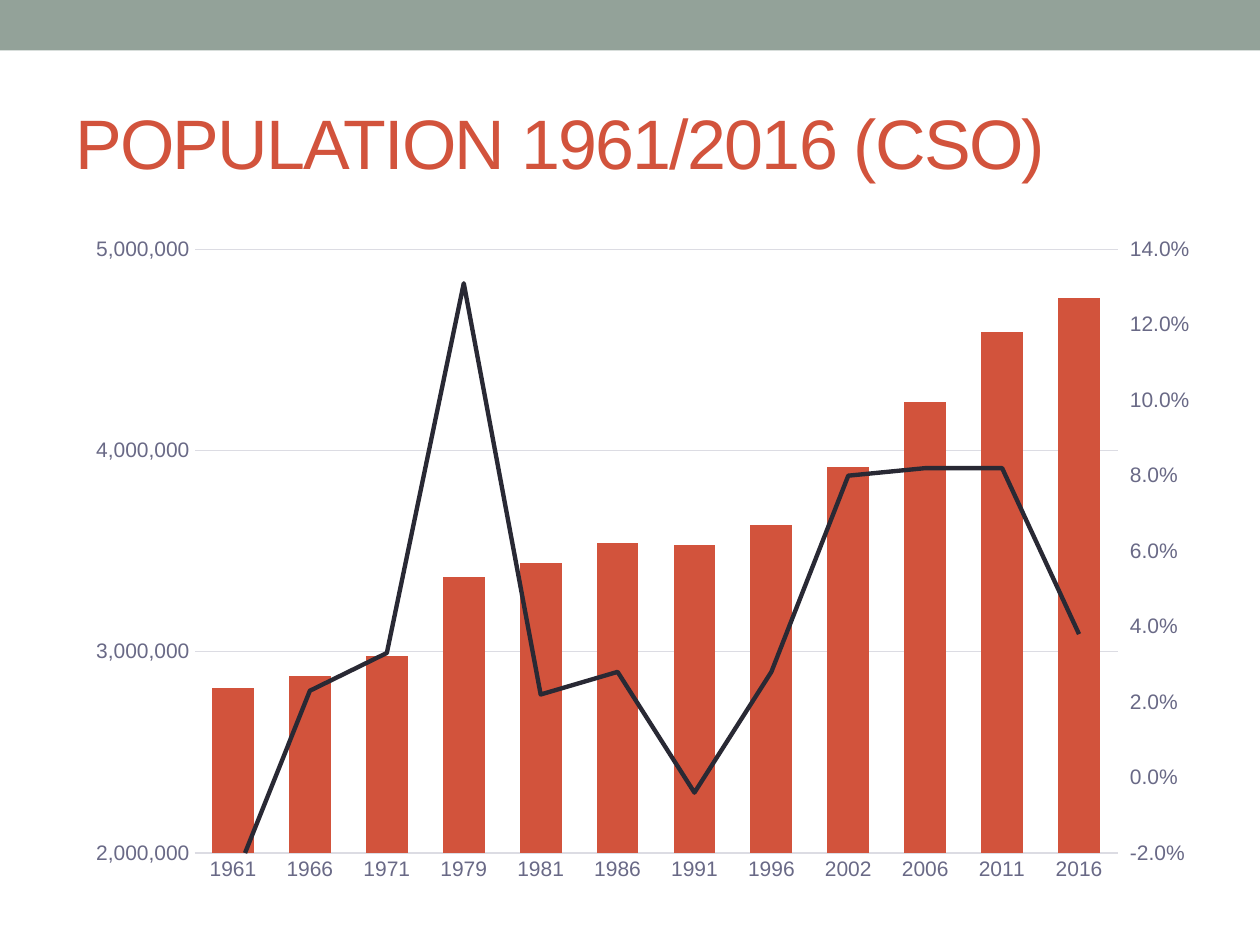
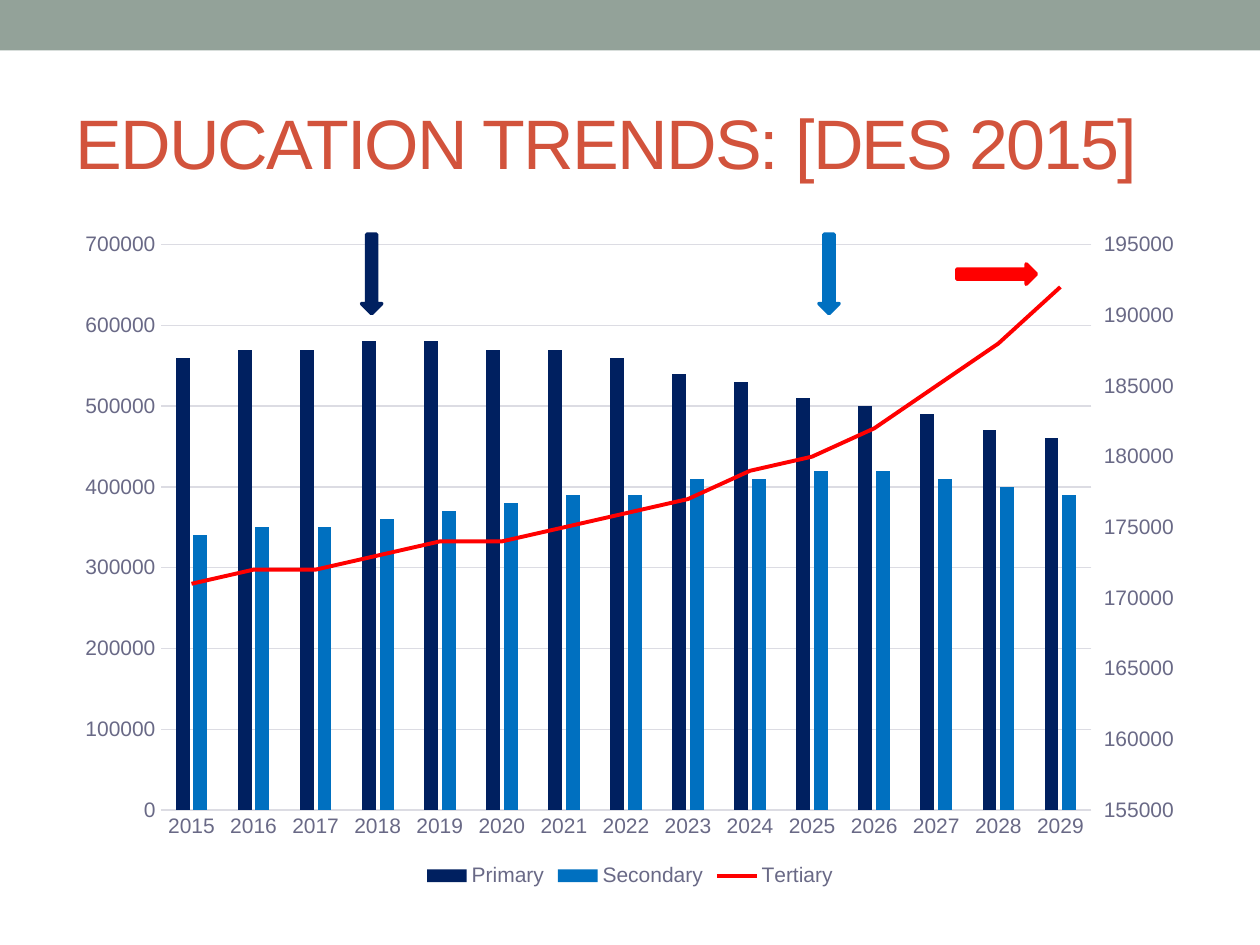
"""Build two slides on population and education trends."""
from copy import deepcopy
from dataclasses import dataclass

from pptx import Presentation
from pptx.chart.axis import CategoryAxis, ValueAxis
from pptx.chart.data import CategoryChartData
from pptx.dml.color import RGBColor
from pptx.enum.chart import XL_CHART_TYPE, XL_LEGEND_POSITION, XL_MARKER_STYLE, XL_TICK_MARK
from pptx.enum.shapes import MSO_SHAPE
from pptx.enum.text import MSO_ANCHOR
from pptx.oxml import parse_xml
from pptx.oxml.ns import nsdecls, qn
from pptx.util import Inches, Pt

COLUMNS = XL_CHART_TYPE.COLUMN_CLUSTERED
LEGEND_BOTTOM = XL_LEGEND_POSITION.BOTTOM
NO_MARKER = XL_MARKER_STYLE.NONE
TICK_NONE, TICK_OUT = XL_TICK_MARK.NONE, XL_TICK_MARK.OUTSIDE
RECTANGLE, DOWN_ARROW = MSO_SHAPE.RECTANGLE, MSO_SHAPE.DOWN_ARROW
MIDDLE = MSO_ANCHOR.MIDDLE


@dataclass(frozen=True)
class Theme:
    """Colours, font and sizes shared by the slides."""
    font: str = "Arial"
    band: str = "93A299"
    accent: str = "D2533C"
    dark: str = "292934"
    label: str = "696986"
    grid: str = "DCDCE3"
    navy: str = "002060"
    blue: str = "0070C0"
    red: str = "FF0000"
    title_size: float = 40
    chart_size: float = 10
    label_size: float = 12
    grid_width: float = 0.75
    arrow_line: float = 2.08


THEME = Theme()


@dataclass(frozen=True)
class Scale:
    """Range and number format of a value axis."""
    minimum: float
    maximum: float
    step: float
    number_format: str = "General"


def rgb(colour):
    """Turn a hex string into a colour."""
    return RGBColor.from_string(colour)


def style_font(font, size, colour):
    """Apply the theme font with a size and colour."""
    font.name = THEME.font
    font.size = Pt(size)
    font.color.rgb = rgb(colour)


def style_line(line, colour, width):
    """Set the colour and width of a line."""
    line.color.rgb = rgb(colour)
    line.width = Pt(width)


def add_text(slide, text, box, *, size, colour, anchor=MIDDLE, spacing=0):
    """Add a text box holding one formatted paragraph."""
    frame = slide.shapes.add_textbox(*map(Inches, box)).text_frame
    frame.word_wrap = True
    frame.vertical_anchor = anchor
    run = frame.paragraphs[0].add_run()
    run.text = text
    style_font(run.font, size, colour)
    run._r.get_or_add_rPr().set("spc", str(int(spacing * 100)))


def add_filled_shape(slide, kind, box, colour, line_width=0, rotation=0):
    """Add a flat shape, outlined in its own colour if a width is given."""
    shape = slide.shapes.add_shape(kind, *map(Inches, box))
    shape.shadow.inherit = False
    shape.rotation = rotation
    shape.fill.solid()
    shape.fill.fore_color.rgb = rgb(colour)
    if line_width:
        style_line(shape.line, colour, line_width)
    else:
        shape.line.fill.background()


def add_arrow(slide, left, colour, rotation=0):
    """Add a marker arrow above the chart."""
    add_filled_shape(slide, DOWN_ARROW, (left, 1.86, 0.16, 0.63), colour,
                     THEME.arrow_line, rotation)


def add_titled_slide(presentation, title):
    """Add a blank slide with the top band and a title."""
    slide = presentation.slides.add_slide(presentation.slide_layouts[6])
    add_filled_shape(slide, RECTANGLE, (0, 0, 10, 0.4), THEME.band)
    add_text(slide, title, (0.5, 0.58, 9, 1.08), size=THEME.title_size,
             colour=THEME.accent, spacing=-1)
    return slide


def style_value_axis(axis, scale, tick, gridlines):
    """Format a value axis that has labels but no line."""
    axis.minimum_scale = scale.minimum
    axis.maximum_scale = scale.maximum
    axis.major_unit = scale.step
    axis.major_tick_mark = tick
    axis.minor_tick_mark = TICK_NONE
    axis.format.line.fill.background()
    axis.has_major_gridlines = gridlines
    if gridlines:
        style_line(axis.major_gridlines.format.line, THEME.grid, THEME.grid_width)
    axis.tick_labels.number_format = scale.number_format
    axis.tick_labels.number_format_is_linked = False
    style_font(axis.tick_labels.font, THEME.label_size, THEME.label)


def style_category_axis(axis):
    """Format the category axis."""
    axis.major_tick_mark = axis.minor_tick_mark = TICK_NONE
    style_line(axis.format.line, THEME.grid, THEME.grid_width)
    style_font(axis.tick_labels.font, THEME.label_size, THEME.label)


def remove_children(parent, tag):
    """Remove every direct child with a tag."""
    for child in parent.findall(qn(tag)):
        parent.remove(child)


def set_plot_area(plot_area, box):
    """Place the inner plot area by fractions of the chart."""
    remove_children(plot_area, "c:layout")
    sizes = "".join(f'<c:{name} val="{value}"/>' for name, value in zip("xywh", box))
    plot_area.insert(0, parse_xml(
        f'<c:layout {nsdecls("c")}><c:manualLayout><c:layoutTarget val="inner"/>'
        f'<c:xMode val="edge"/><c:yMode val="edge"/>{sizes}'
        '</c:manualLayout></c:layout>'))


def move_last_series_to_right_axis(plot_area, scale):
    """Turn the last column series into a line on a second value axis."""
    columns = plot_area.find(qn("c:barChart"))
    series = columns.findall(qn("c:ser"))[-1]
    remove_children(series, "c:invertIfNegative")
    category_id, value_id = "50010", "50020"
    line_chart = parse_xml(
        f'<c:lineChart {nsdecls("c")}><c:grouping val="standard"/>'
        '<c:varyColors val="0"/><c:marker val="1"/>'
        f'<c:axId val="{category_id}"/><c:axId val="{value_id}"/></c:lineChart>')
    line_chart.insert(2, series)
    columns.addnext(line_chart)

    left_axis = plot_area.find(qn("c:valAx"))
    categories = deepcopy(plot_area.find(qn("c:catAx")))
    right_axis = deepcopy(left_axis)
    left_axis.addnext(categories)
    categories.addnext(right_axis)
    for axis, own, other in ((categories, category_id, value_id),
                             (right_axis, value_id, category_id)):
        axis.find(qn("c:axId")).set("val", own)
        axis.find(qn("c:crossAx")).set("val", other)
    right_axis.find(qn("c:axPos")).set("val", "r")
    right_axis.find(qn("c:crosses")).set("val", "max")
    CategoryAxis(categories).visible = False
    style_value_axis(ValueAxis(right_axis), scale, TICK_OUT, False)


def add_combined_chart(slide, categories, series, *, colours, left, right, gap,
                       overlap, line_width, plot_box, legend=False):
    """Add columns on the left axis with the last series as a line on the right."""
    data = CategoryChartData()
    data.categories = categories
    for index, (name, values) in enumerate(series.items()):
        scale = right if index == len(series) - 1 else left
        data.add_series(name, values, scale.number_format)
    chart = slide.shapes.add_chart(
        COLUMNS, *map(Inches, (0.5, 1.75, 9, 5.33)), data).chart
    style_font(chart.font, THEME.chart_size, THEME.dark)
    chart.has_title = False
    style_category_axis(chart.category_axis)
    style_value_axis(chart.value_axis, left, TICK_NONE, True)
    plot_area = chart.element.find(".//" + qn("c:plotArea"))
    set_plot_area(plot_area, plot_box)
    move_last_series_to_right_axis(plot_area, right)

    columns, line_plot = chart.plots
    columns.gap_width, columns.overlap = gap, overlap
    columns.vary_by_categories = False
    for column_series, colour in zip(columns.series, colours):
        column_series.format.fill.solid()
        column_series.format.fill.fore_color.rgb = rgb(colour)
        column_series.invert_if_negative = False
    line = line_plot.series[0]
    style_line(line.format.line, colours[-1], line_width)
    line.marker.style = NO_MARKER
    line.smooth = False

    chart.has_legend = legend
    if legend:
        chart.legend.position = LEGEND_BOTTOM
        chart.legend.include_in_layout = False
        style_font(chart.legend.font, THEME.label_size, THEME.label)


def thousands(*values):
    """Scale values given in thousands."""
    return [value * 1000 for value in values]


def add_population_slide(presentation):
    """Add the slide on population and its growth."""
    slide = add_titled_slide(presentation, "POPULATION 1961/2016 (CSO)")
    years = "1961 1966 1971 1979 1981 1986 1991 1996 2002 2006 2011 2016".split()
    series = {
        "Series 1": thousands(2820, 2880, 2980, 3370, 3440, 3540,
                              3530, 3630, 3920, 4240, 4590, 4760),
        "Series 2": [-0.028, 0.023, 0.033, 0.131, 0.022, 0.028,
                     -0.004, 0.028, 0.08, 0.082, 0.082, 0.038],
    }
    add_combined_chart(
        slide, years, series, colours=(THEME.accent, THEME.dark),
        left=Scale(2000000, 5000000, 1000000, "#,##0"),
        right=Scale(-0.02, 0.14, 0.02, "0.0%"),
        gap=84, overlap=-8, line_width=2.5, plot_box=(0.116, 0.043, 0.814, 0.899))


def add_education_slide(presentation):
    """Add the slide on enrolment by level of education."""
    slide = add_titled_slide(presentation, "EDUCATION TRENDS: [DES 2015]")
    years = [str(year) for year in range(2015, 2030)]
    series = {
        "Primary": thousands(560, 570, 570, 580, 580, 570, 570, 560,
                             540, 530, 510, 500, 490, 470, 460),
        "Secondary": thousands(340, 350, 350, 360, 370, 380, 390, 390,
                               410, 410, 420, 420, 410, 400, 390),
        "Tertiary": thousands(171, 172, 172, 173, 174, 174, 175, 176,
                              177, 179, 180, 182, 185, 188, 192),
    }
    add_combined_chart(
        slide, years, series, colours=(THEME.navy, THEME.blue, THEME.red),
        left=Scale(0, 700000, 100000), right=Scale(155000, 195000, 5000),
        gap=219, overlap=-27, line_width=2.25,
        plot_box=(0.086, 0.036, 0.821, 0.842), legend=True)
    add_arrow(slide, 2.87, THEME.navy)
    add_arrow(slide, 6.5, THEME.blue)
    add_arrow(slide, 7.83, THEME.red, rotation=270)


def main():
    """Build and save the presentation."""
    presentation = Presentation()
    presentation.slide_width, presentation.slide_height = Inches(10), Inches(7.5)
    add_population_slide(presentation)
    add_education_slide(presentation)
    presentation.save("out.pptx")


if __name__ == "__main__":
    main()
